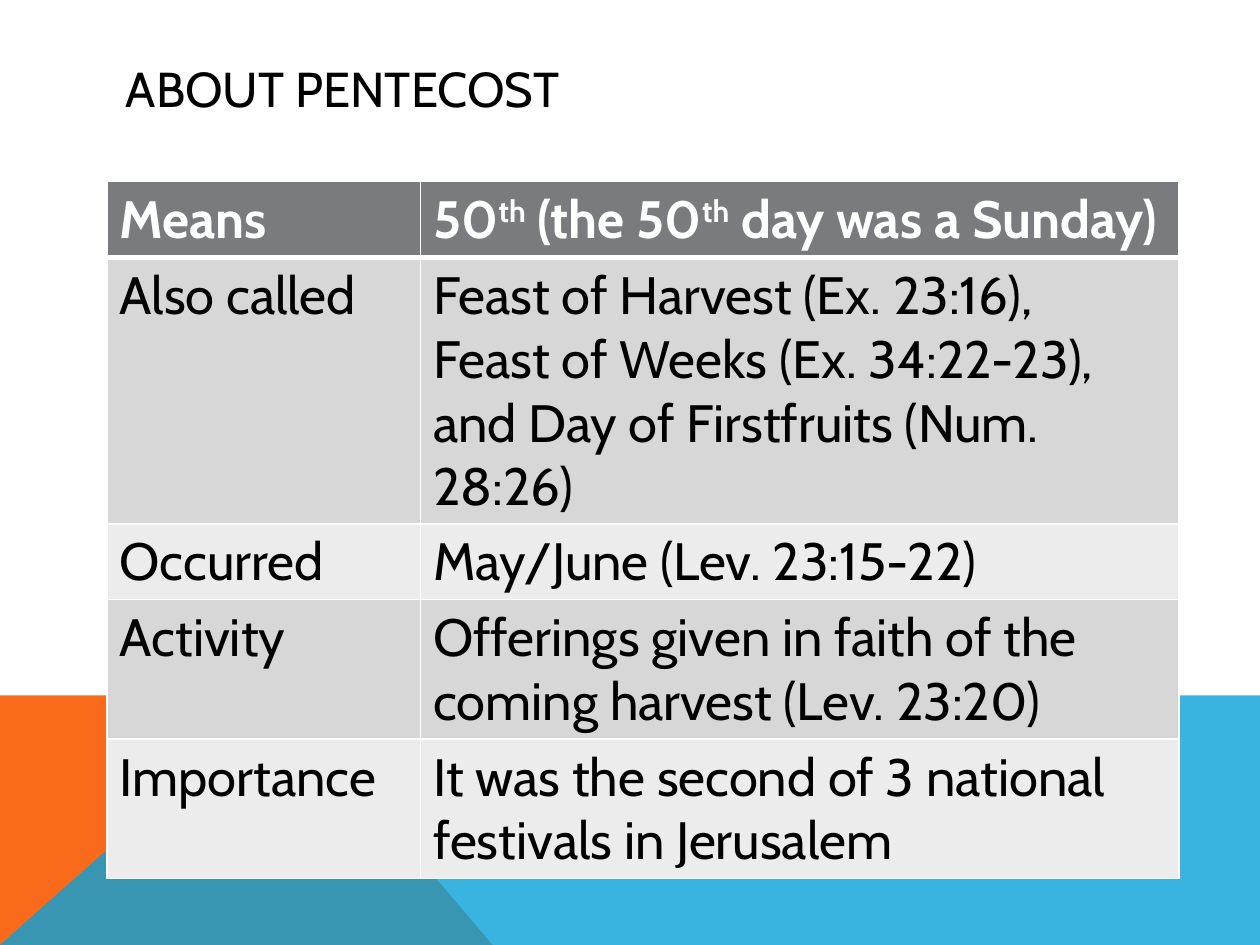
from lxml.etree import SubElement
from pptx import Presentation
from pptx.dml.color import RGBColor
from pptx.enum.text import MSO_ANCHOR
from pptx.oxml.ns import qn
from pptx.util import Cm, Pt

FONT = "Cabin"
ROWS = [
    ("Means", ["50", "th", " (the 50", "th", " day was a Sunday)"], 1),
    ("Also called", ["Feast of Harvest (Ex. 23:16),\vFeast of Weeks (Ex. 34:22-23), "
                     "and Day of Firstfruits (Num. 28:26)"], 4),
    ("Occurred", ["May/June (Lev. 23:15-22)"], 1),
    ("Activity", ["Offerings given in faith of the coming harvest (Lev. 23:20)"], 2),
    ("Importance", ["It was the second of 3 national festivals in Jerusalem"], 2),
]


def color(code):
    """Turn a hex string into a colour."""
    return RGBColor.from_string(code)


def style_font(font, size, code, bold=False):
    """Set the typeface, size, colour and weight of a font."""
    font.name, font.size, font.bold = FONT, Pt(size), bold
    font.color.rgb = color(code)


def add_band(slide, points, code, opacity=100):
    """Draw a filled polygon through points given in centimetres."""
    start, *rest = [(Cm(x), Cm(y)) for x, y in points]
    builder = slide.shapes.build_freeform(*start)
    builder.add_line_segments(rest, close=True)
    band = builder.convert_to_shape()
    band.shadow.inherit = False
    band.line.fill.background()
    band.fill.solid()
    band.fill.fore_color.rgb = color(code)
    if opacity < 100:
        tint = next(band.element.iter(qn("a:srgbClr")))
        SubElement(tint, qn("a:alpha"), val=str(opacity * 1000))


def add_title(slide, text):
    """Add the slide title."""
    box = slide.shapes.add_textbox(Cm(2.29), Cm(1.02), Cm(20.88), Cm(1.52))
    frame = box.text_frame
    frame.word_wrap = True
    frame.vertical_anchor = MSO_ANCHOR.MIDDLE
    para = frame.paragraphs[0]
    para.text = text
    style_font(para.font, 28, "000000")


def add_borders(cell, widths):
    """Give a cell white borders with a width in points for each side."""
    properties = cell._tc.get_or_add_tcPr()
    for side, width in widths.items():
        line = SubElement(properties, qn(f"a:ln{side}"), w=str(Pt(width)))
        fill = SubElement(line, qn("a:solidFill"))
        SubElement(fill, qn("a:srgbClr"), val="FFFFFF")


def fill_cell(cell, parts, row):
    """Write the text parts into a cell and style it for its row."""
    header = row == 0
    add_borders(cell, {"L": 1, "R": 1, "T": 3 if row == 1 else 1, "B": 3 if header else 1})
    cell.fill.solid()
    cell.fill.fore_color.rgb = color("797B7E" if header else ("ECECEC", "D7D7D8")[row % 2])
    para = cell.text_frame.paragraphs[0]
    style_font(para.font, 30, "FFFFFF" if header else "000000", header)
    if len(parts) == 1:
        para.text = parts[0]
        return
    for part in parts:
        span = para.add_run()
        span.text = part
        if part == "th":
            span._r.get_or_add_rPr().set("baseline", "30000")


def add_facts(slide):
    """Add the table, with each row as tall as its lines of text."""
    heights = [Cm(0.25 + 1.28 * lines) for _, _, lines in ROWS]
    table = slide.shapes.add_table(
        len(ROWS), 2, Cm(2.16), Cm(3.66), Cm(21.61), sum(heights)).table
    table.columns[0].width, table.columns[1].width = Cm(6.32), Cm(15.29)
    for index, (label, parts, _) in enumerate(ROWS):
        table.rows[index].height = heights[index]
        fill_cell(table.cell(index, 0), [label], index)
        fill_cell(table.cell(index, 1), parts, index)


def main():
    """Build and save the slide."""
    deck = Presentation()
    deck.slide_width, deck.slide_height = Cm(25.4), Cm(19.05)
    slide = deck.slides.add_slide(deck.slide_layouts[6])
    add_band(slide, [(0, 19.05), (0, 14.02), (5.66, 14.02), (9.93, 19.05)], "F96A1B")
    add_band(slide, [(0, 19.05), (5.66, 14.02), (25.4, 14.02), (25.4, 19.05)], "08A1D9", 80)
    add_title(slide, "ABOUT PENTECOST")
    add_facts(slide)
    deck.save("out.pptx")


if __name__ == "__main__":
    main()
